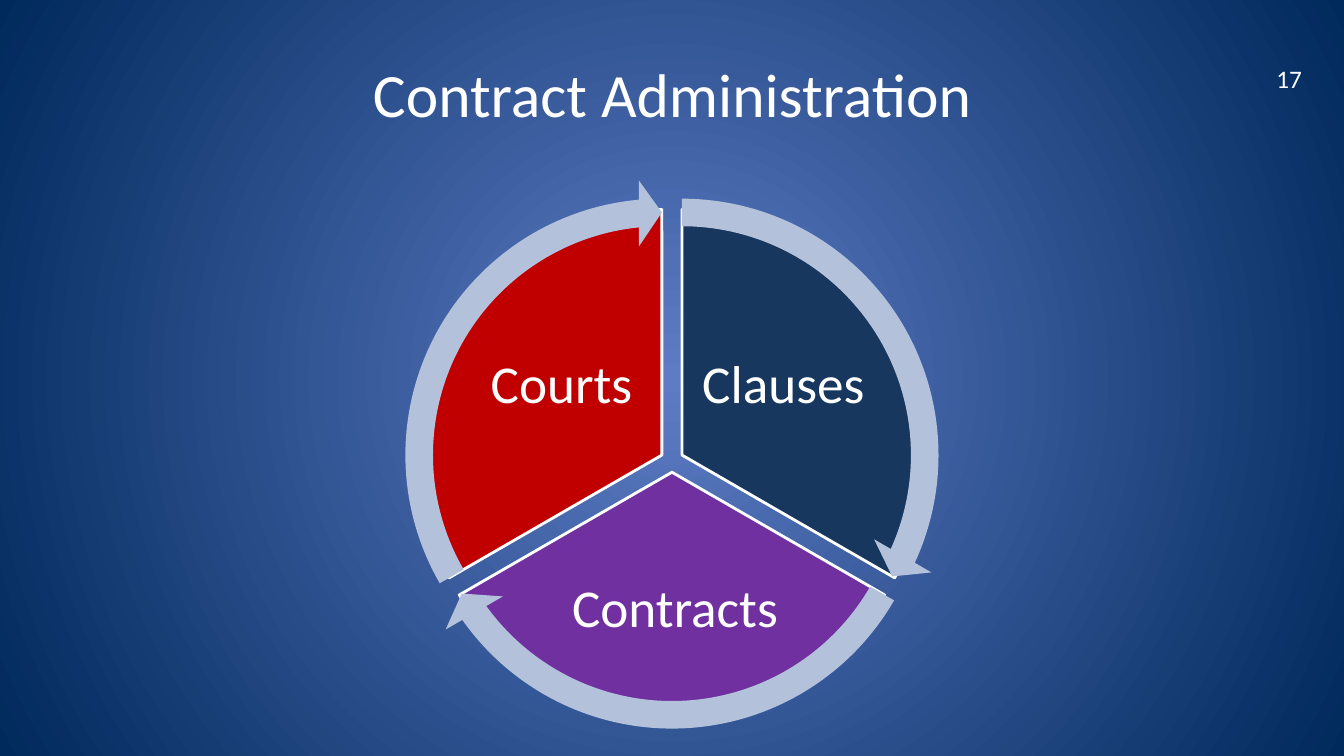
"""Build the Contract Administration slide: a three-part segmented cycle."""
from lxml import etree
from pptx import Presentation
from pptx.dml.color import RGBColor
from pptx.enum.shapes import MSO_SHAPE as Preset
from pptx.enum.text import MSO_ANCHOR as Anchor, PP_ALIGN as Align
from pptx.oxml.ns import qn
from pptx.util import Inches, Pt

COLORS = {
    "glow": "5E7CC5",
    "edge": "00295C",
    "white": "FFFFFF",
    "navy": "17375E",
    "purple": "7030A0",
    "red": "C00000",
    "arrow": "B3C1DB",
}
PIE_SIZE = 4.87
ARROW_MARGIN = 0.3


def add_text(place, text, size, align=Align.CENTER, anchor=Anchor.MIDDLE, inset=None):
    box = page.shapes.add_textbox(*map(Inches, place))
    frame = box.text_frame
    frame.word_wrap = True
    frame.vertical_anchor = anchor
    if inset is not None:
        frame.margin_left = frame.margin_right = Inches(inset)
        frame.margin_top = frame.margin_bottom = Inches(inset)
    para = frame.paragraphs[0]
    para.text = text
    para.alignment = align
    para.font.name = "Calibri"
    para.font.size = Pt(size)
    para.font.color.rgb = RGBColor.from_string(COLORS["white"])
    return para


def add_preset(preset, left, top, size, color, adjustments):
    shape = page.shapes.add_shape(preset, *map(Inches, (left, top, size, size)))
    shape.shadow.inherit = False
    shape.fill.solid()
    shape.fill.fore_color.rgb = RGBColor.from_string(COLORS[color])
    for index, value in enumerate(adjustments):
        shape.adjustments[index] = value
    return shape


deck = Presentation()
deck.slide_width, deck.slide_height = Inches(13.33), Inches(7.5)
page = deck.slides.add_slide(deck.slide_layouts[6])

backdrop = page.background.fill
backdrop.gradient()
for stop, color in zip(backdrop.gradient_stops, ("glow", "edge")):
    stop.color.rgb = RGBColor.from_string(COLORS[color])
gradient = page.element.find(".//" + qn("a:gradFill"))
linear = gradient.find(qn("a:lin"))
radial = etree.Element(qn("a:path"), path="circle")
center = {side: "50000" for side in "ltrb"}
etree.SubElement(radial, qn("a:fillToRect"), center)
gradient.replace(linear, radial)

add_text((12.56, 0.58, 0.78, 0.4), "17", 18, Align.LEFT, Anchor.TOP)
add_text((0.67, 0.3, 12, 1.25), "Contract Administration", 44)

# label, color, pie corner, pie angles, label place, arrow head and tail angles
segments = [
    ("Clauses", "navy", (4.33, 2.08), (162, 18), (6.9, 3.11, 1.74, 1.45), (14.73, 161.99)),
    ("Contracts", "purple", (4.23, 2.25), (18, 90), (5.39, 5.41, 2.61, 1.28), (86.72, 18)),
    ("Courts", "red", (4.13, 2.08), (90, 162), (4.7, 3.11, 1.74, 1.45), (158.73, 90)),
]
for label, color, corner, angles, place, _ in segments:
    pie = add_preset(Preset.PIE, *corner, PIE_SIZE, color, angles)
    pie.line.color.rgb = RGBColor.from_string(COLORS["white"])
    pie.line.width = Pt(2)
    add_text(place, label, 38, inset=0.05).line_spacing = 0.9

for _, _, (left, top), _, _, (head, tail) in segments:
    arrow = add_preset(
        Preset.CIRCULAR_ARROW,
        left - ARROW_MARGIN,
        top - ARROW_MARGIN,
        PIE_SIZE + 2 * ARROW_MARGIN,
        "arrow",
        (0.05, 3.28, head, tail, 0.06),
    )
    arrow.line.fill.background()

deck.save("out.pptx")
